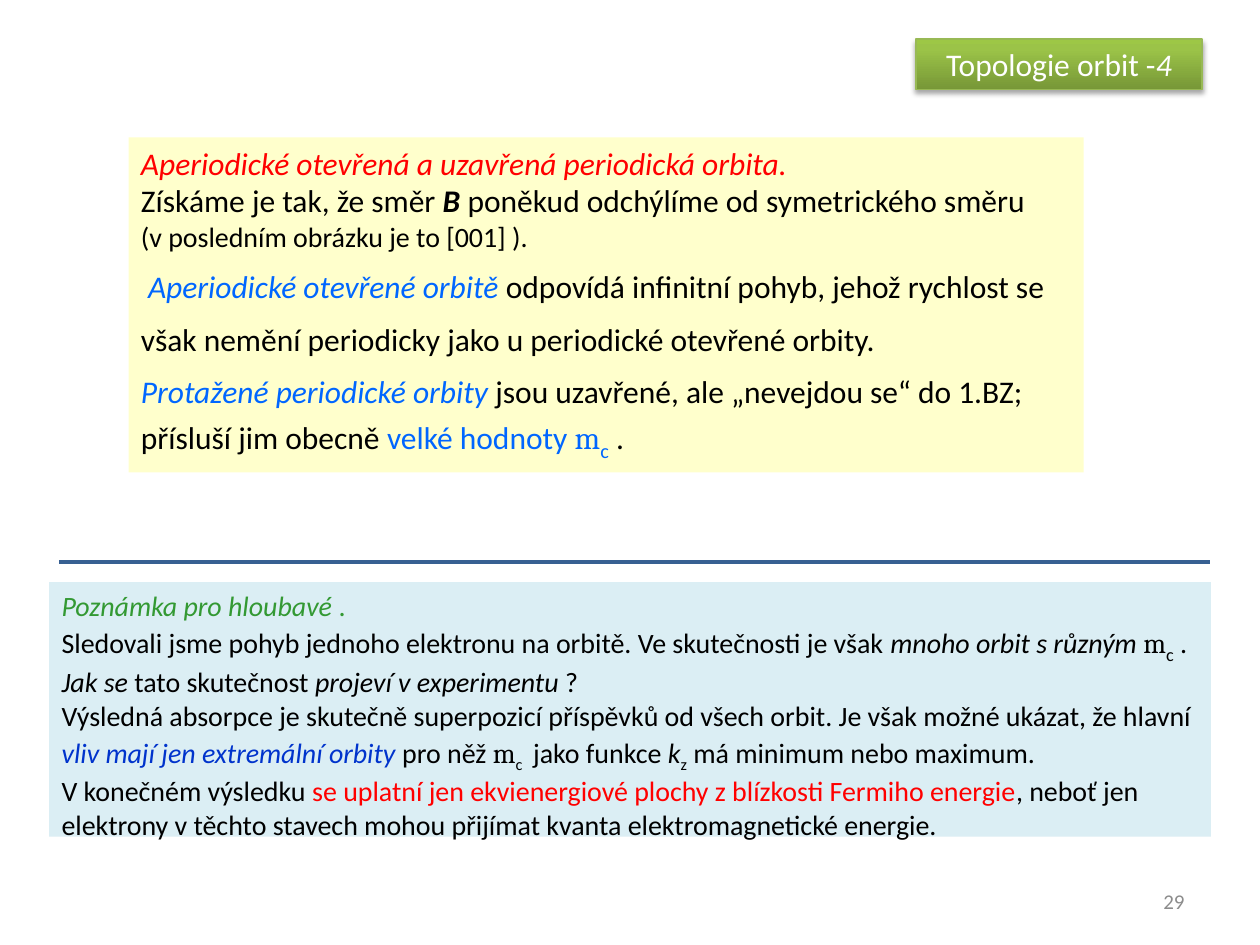
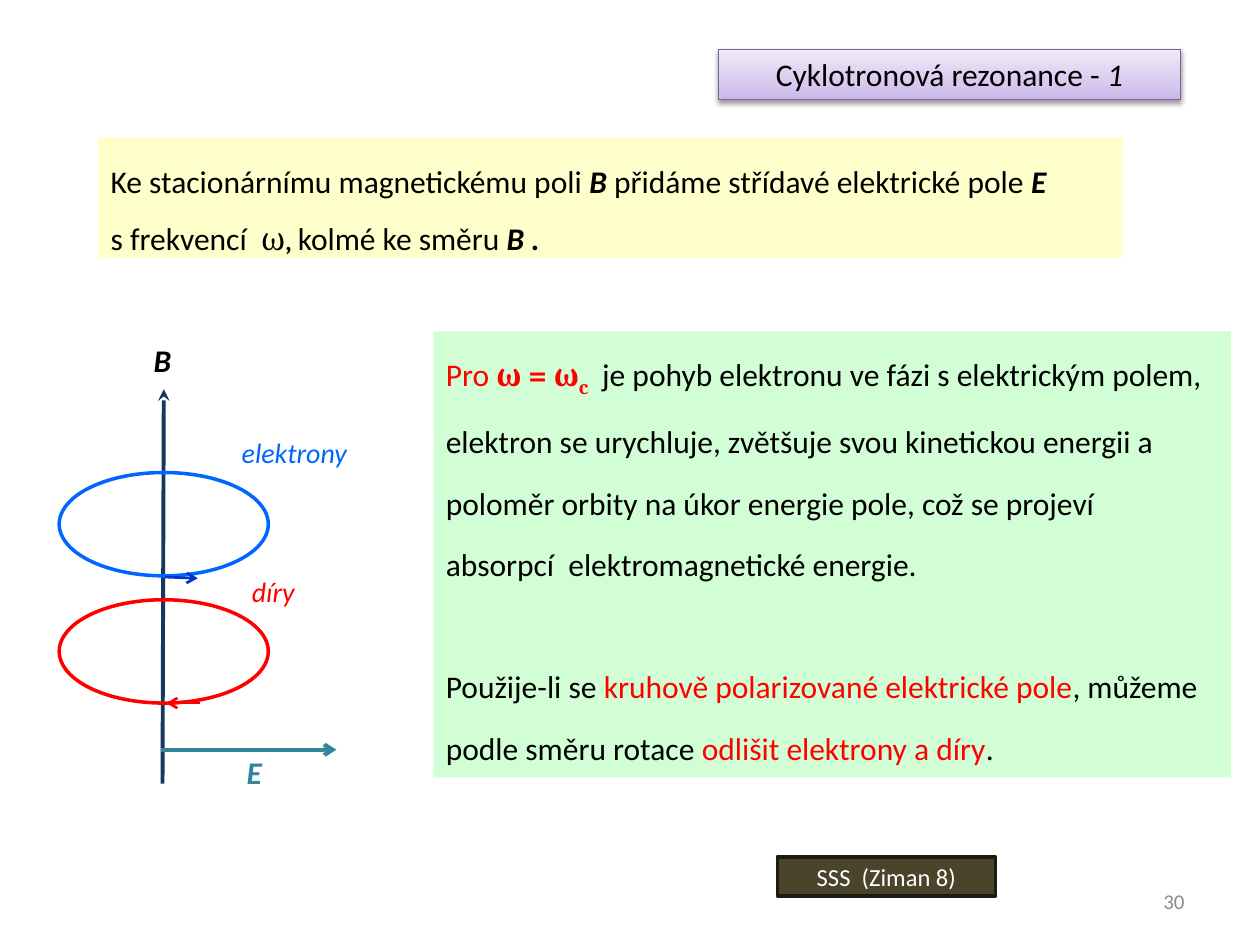
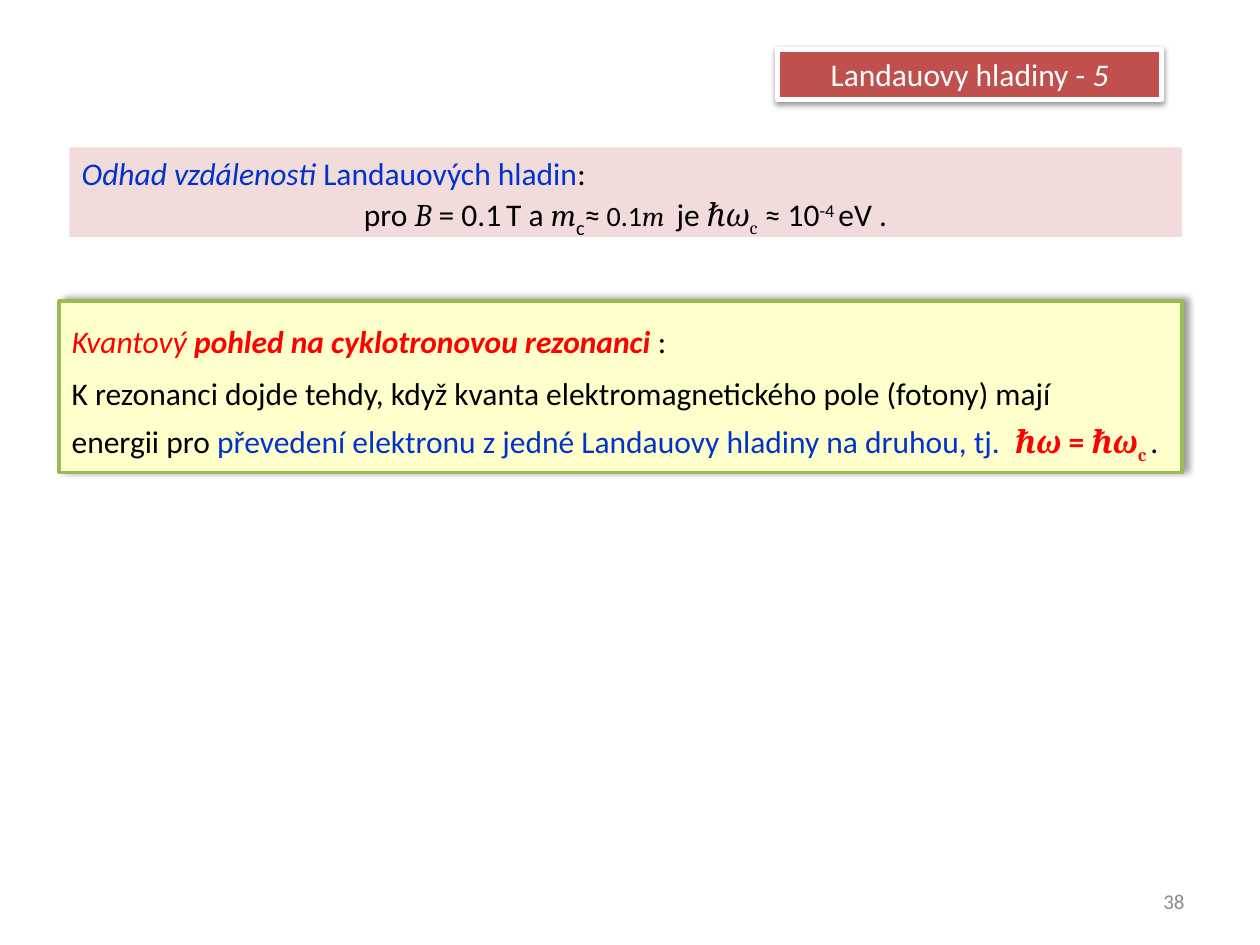
from lxml import etree
from pptx import Presentation
from pptx import util as u
from pptx.dml.color import RGBColor
from pptx.enum import shapes, text
from pptx.oxml.ns import qn

HUES = {
    "black": "000000", "white": "FFFFFF", "gray": "8C8C8C", "red": "FF0000",
    "blue": "0066FF", "navy": "0033CC", "green": "339933", "teal": "31859C",
    "dark": "17375E", "steel": "376092", "cream": "FFFFCC", "ice": "DBEEF4",
    "mint": "D2FED6", "rose": "F2DCDB", "brick": "C0504D", "olive": "4A452A",
    "soot": "1E1C11", "lime": "9BBB59",
}
ALIGN = {"l": text.PP_ALIGN.LEFT, "c": text.PP_ALIGN.CENTER, "r": text.PP_ALIGN.RIGHT}
LIFT = {"sub": "-25000", "sup": "30000"}

HEADS = [
    dict(words="Topologie orbit -", part="4", page="29", at=(7.27, 0.31, 2.27, 0.4),
         color="white", fill=[(0, "779737"), (80, "9BC348"), (100, "9DC746")],
         line=("98B955", 0.75), shade=(35, 3.1, 1.8, 90)),
    dict(words="Cyklotronová rezonance - ", part="1", page="30", at=(5.7, 0.39, 3.67, 0.4),
         color="black", fill=[(0, "C9B5E8"), (35, "D8CBEE"), (100, "F0EAF9")],
         line=("7D60A0", 0.75), shade=(38, 3.1, 1.6, 90)),
    dict(words="Landauovy hladiny - ", part="5", page="38", at=(6.17, 0.39, 3.05, 0.4),
         color="white", fill="brick", line=("white", 3), shade=(38, 3.1, 1.6, 90)),
]

OPEN = [
    [("Aperiodické otevřená a uzavřená periodická orbita.", "i red")],
    ["Získáme je tak, že směr ", ("B ", "b i"), "poněkud odchýlíme od symetrického směru"],
    [("(v posledním obrázku je to [001] ).", "16")],
    {"line": u.Pt(30), "runs": [
        (" Aperiodické otevřené orbitě ", "i blue"),
        "odpovídá infinitní pohyb, jehož rychlost se však nemění periodicky "
        "jako u periodické otevřené orbity."]},
    {"line": u.Pt(30), "runs": [
        ("Protažené periodické orbity ", "i blue"),
        "jsou uzavřené, ale „nevejdou se“ do 1.BZ; přísluší jim obecně ",
        ("velké hodnoty ", "blue"), ("m", "cam blue"), ("c", "20 sub blue"), " ."]},
]
NOTE = [
    [("Poznámka pro hloubavé ", "i green"), (".", "green")],
    ["Sledovali jsme pohyb jednoho elektronu na orbitě. Ve skutečnosti je však ",
     ("mnoho orbit s různým ", "i"), ("m", "cam"), ("c", "18 sub"), " ."],
    [("Jak se ", "i"), "tato skutečnost ", ("projeví v experimentu ", "i"), "?"],
    ["Výsledná absorpce je skutečně superpozicí příspěvků od všech orbit. "
     "Je však možné ukázat, že hlavní ",
     ("vliv mají jen extremální orbity ", "i navy"), "pro něž ", ("m", "cam"),
     ("c ", "sub"), (" ", "18"), "jako funkce ", ("k", "i"), ("z", "sub"),
     " má minimum nebo maximum."],
    ["V konečném výsledku ",
     ("se uplatní jen ekvienergiové plochy z blízkosti Fermiho energie", "red"),
     ", neboť jen elektrony v těchto stavech mohou přijímat kvanta "
     "elektromagnetické energie."],
]
FIELD = [
    ["Ke stacionárnímu magnetickému poli ", ("B", "b i"),
     " přidáme střídavé elektrické pole ", ("E\n", "b i"), "s frekvencí  ",
     ("ω, ", "cam"), "kolmé ke směru ", ("B .", "b i")],
]
PHASE = [
    [("Pro ", "red"), ("ω = ω", "cam b red"), ("c", "cam b 20 sub red"), ("  ", "cam"),
     "je pohyb elektronu ve fázi s elektrickým polem,"],
    ["elektron se urychluje, zvětšuje svou kinetickou energii a poloměr orbity "
     "na úkor energie pole, což se projeví \nabsorpcí  elektromagnetické energie."],
    {"before": 35, "runs": [
        "Použije-li se ", ("kruhově polarizované elektrické pole", "red"),
        ", můžeme podle směru rotace ", ("odlišit elektrony a díry", "red"), "."]},
]
QUANTA = [
    [("Kvantový ", "i red"), ("pohled na cyklotronovou rezonanci ", "b i red"), ":"],
    ["K rezonanci dojde tehdy, když kvanta elektromagnetického pole (fotony) mají"],
    {"after": 6, "runs": [
        "energii pro ",
        ("převedení elektronu z jedné Landauovy hladiny na druhou, tj.  ", "navy"),
        ("ℏ", "cam b red"), ("ω ", "cam b i red"), ("= ", "b red"), ("ℏ", "cam b red"),
        ("ω", "cam b i red"), ("c ", "cam b sub red"), "."]},
]
GAP = [
    [("Odhad vzdálenosti ", "i navy"), ("Landauových hladin", "navy"), ":"],
    {"align": "c", "runs": [
        "pro ", ("B", "cam i"), " = 0.1", (" ", "12"), "T a ", ("m", "cam i"),
        ("c", "20 sub"), "≈", (" 0.1", "16"), ("m  ", "cam i 16"), "je ",
        ("ℏ", "cam"), ("ω", "cam i"), ("c", "cam sub"), " ≈ 10", ("-4", "sup"),
        (" ", "10.5"), "eV ."]},
]
ORBITS = [
    dict(top=4.76, color="red", dart="red", ends=(1.59, 5.58, 1.32, 5.58)),
    dict(top=3.75, color="blue", dart="navy", ends=(1.31, 4.58, 1.57, 4.59)),
]
LABELS = [
    ("B", "b i 18", (1.12, 2.66, 0.35, 0.47)),
    ("elektrony", "i 16 blue", (1.82, 3.41, 1.31, 0.43)),
    ("díry", "i 16 red", (1.9, 4.51, 0.61, 0.43)),
    ("E", "b i 18 teal", (1.86, 5.93, 0.35, 0.47)),
]


def hue(name):
    return RGBColor.from_string(HUES.get(name, name))


def inch(at):
    return [u.Inches(n) for n in at]


def style(run, marks, size, color):
    font = run.font
    font.name, font.size = "Calibri", u.Pt(size)
    font.color.rgb = hue(color)
    for mark in marks.split():
        if mark == "b":
            font.bold = True
        elif mark == "i":
            font.italic = True
        elif mark == "cam":
            font.name = "Cambria"
        elif mark in LIFT:
            run._r.get_or_add_rPr().set("baseline", LIFT[mark])
        elif mark in HUES:
            font.color.rgb = hue(mark)
        else:
            font.size = u.Pt(float(mark))


def write(shape, paras, size=18, color="black", align="l", line=None, mid=False):
    frame = shape.text_frame
    frame.word_wrap = True
    frame.auto_size = text.MSO_AUTO_SIZE.NONE
    frame.vertical_anchor = text.MSO_ANCHOR.MIDDLE if mid else text.MSO_ANCHOR.TOP
    for k, item in enumerate(paras):
        opts = item if isinstance(item, dict) else {"runs": item}
        para = frame.add_paragraph() if k else frame.paragraphs[0]
        para.alignment = ALIGN[opts.get("align", align)]
        para.line_spacing = opts.get("line", line)
        para.space_before = u.Pt(opts.get("before", 0))
        para.space_after = u.Pt(opts.get("after", 0))
        for piece in opts["runs"]:
            words, marks = (piece, "") if isinstance(piece, str) else piece
            for n, bit in enumerate(words.split("\n")):
                if n:
                    para.add_line_break()
                if bit:
                    run = para.add_run()
                    run.text = bit
                    style(run, marks, size, color)


def paint(shape, fill=None, line=None, shade=None):
    props = shape._element.spPr
    if isinstance(fill, list):
        shape.fill.gradient()
        shape.fill.gradient_angle = 90
        stops = props.find(".//" + qn("a:gsLst"))
        for stop in list(stops):
            stops.remove(stop)
        for spot, tint in fill:
            stop = etree.SubElement(stops, qn("a:gs"), pos=str(spot * 1000))
            etree.SubElement(stop, qn("a:srgbClr"), val=tint)
    elif fill:
        shape.fill.solid()
        shape.fill.fore_color.rgb = hue(fill)
    else:
        shape.fill.background()
    if line:
        shape.line.color.rgb = hue(line[0])
        shape.line.width = u.Pt(line[1])
    else:
        shape.line.fill.background()
    shape.shadow.inherit = False
    if shade:
        alpha, blur, dist, turn = shade
        cast = etree.SubElement(
            props.find(qn("a:effectLst")), qn("a:outerShdw"), blurRad=str(u.Pt(blur)),
            dist=str(u.Pt(dist)), dir=str(turn * 60000), rotWithShape="0")
        tint = etree.SubElement(cast, qn("a:srgbClr"), val="000000")
        etree.SubElement(tint, qn("a:alpha"), val=str(alpha * 1000))


def panel(slide, at, paras, fill=None, edge=None, shade=None, **form):
    box = slide.shapes.add_textbox(*inch(at))
    paint(box, fill, edge, shade)
    write(box, paras, **form)


def rule(slide, ends, color, width, tip=None):
    line = slide.shapes.add_connector(shapes.MSO_CONNECTOR.STRAIGHT, *inch(ends))
    line.line.color.rgb = hue(color)
    line.line.width = u.Pt(width)
    if tip:
        etree.SubElement(line.line._get_or_add_ln(), qn("a:tailEnd"), type=tip)
    etree.SubElement(line._element.spPr, qn("a:effectLst"))


def start(deck, head):
    slide = deck.slides.add_slide(deck.slide_layouts[5])
    title = slide.shapes.title
    title.left, title.top, title.width, title.height = inch(head["at"])
    paint(title, head["fill"], head["line"], head["shade"])
    write(title, [[head["words"], (head["part"], "i")]], color=head["color"],
          align="c", mid=True)
    panel(slide, (7.17, 6.95, 2.33, 0.4), [[head["page"]]], size=12, color="gray",
          align="r", mid=True)
    return slide


def topology(slide):
    panel(slide, (1.02, 1.09, 7.58, 2.66), OPEN, "cream")
    rule(slide, (0.47, 4.46, 9.6, 4.46), "steel", 2.25)
    panel(slide, (0.39, 4.62, 9.22, 2.02), NOTE, "ice", size=16)


def resonance(slide):
    panel(slide, (0.78, 1.09, 8.13, 0.96), FIELD, "cream", line=1.5)
    rule(slide, (1.29, 6.22, 1.3, 3.09), "dark", 2.25, "stealth")
    for orbit in ORBITS:
        ring = slide.shapes.add_shape(
            shapes.MSO_SHAPE.OVAL, *inch((0.47, orbit["top"], 1.66, 0.82)))
        paint(ring, line=(orbit["color"], 2))
        rule(slide, orbit["ends"], orbit["dart"], 1.5, "arrow")
    rule(slide, (1.28, 5.95, 2.67, 5.95), "teal", 2.25, "arrow")
    for words, marks, at in LABELS:
        panel(slide, at, [[(words, marks)]])
    panel(slide, (3.44, 2.63, 6.33, 3.54), PHASE, "mint", line=u.Pt(35))
    button = slide.shapes.add_shape(
        shapes.MSO_SHAPE.ACTION_BUTTON_CUSTOM, *inch((6.17, 6.8, 1.73, 0.31)))
    paint(button, "olive", ("soot", 2))
    write(button, [["SSS  (Ziman 8)"]], size=14, color="white", align="c", mid=True)


def landau(slide):
    panel(slide, (0.47, 2.39, 8.91, 1.36), QUANTA, "cream", ("lime", 2),
          (40, 4, 3, 315), line=u.Pt(30))
    panel(slide, (0.55, 1.17, 8.83, 0.71), GAP, "rose")


def main():
    deck = Presentation()
    deck.slide_width, deck.slide_height = inch((10, 7.5))
    for head, build in zip(HEADS, (topology, resonance, landau)):
        build(start(deck, head))
    deck.save("out.pptx")


if __name__ == "__main__":
    main()
